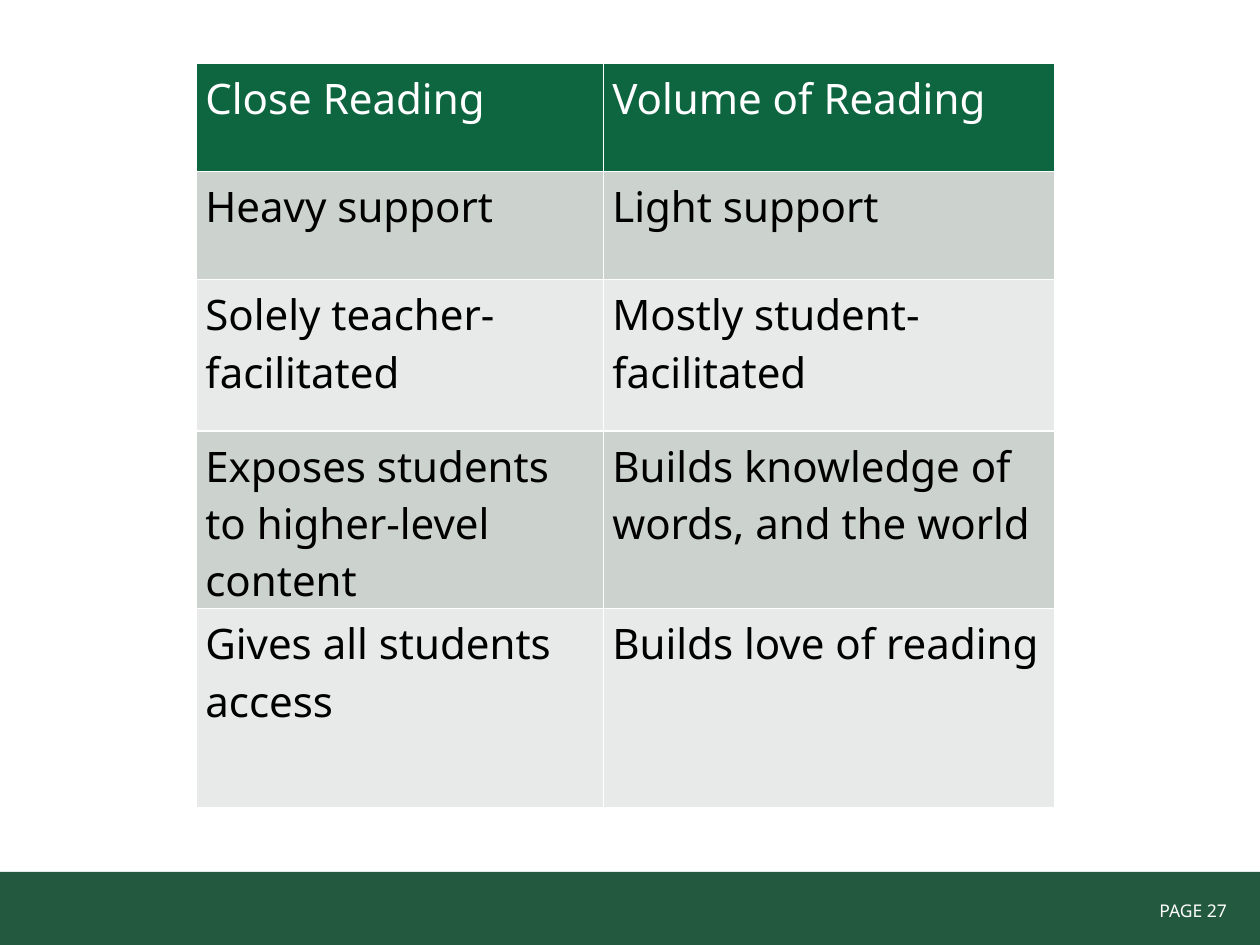
from dataclasses import dataclass

from lxml.etree import SubElement
from pptx import Presentation
from pptx.dml.color import RGBColor
from pptx.enum.shapes import MSO_SHAPE
from pptx.enum.text import MSO_AUTO_SIZE, PP_ALIGN
from pptx.oxml.ns import qn
from pptx.slide import Slide
from pptx.table import _Cell
from pptx.text.text import _Paragraph
from pptx.util import Inches, Pt


@dataclass(frozen=True)
class Theme:
    font: str = "Noto Sans"
    cell_size: int = 24
    footer_size: int = 10
    header: str = "0E6641"
    bands: tuple[str, str] = ("CCD3CF", "E7EAE9")
    footer: str = "23593E"
    light: str = "FFFFFF"
    dark: str = "000000"
    border: float = 1


@dataclass(frozen=True)
class Row:
    height: float
    close_reading: str
    volume_of_reading: str


THEME = Theme()
WIDTH, HEIGHT = 10, 7.5
FOOTER_TOP = 6.92
COLUMNS = (3.23, 3.58)
ROWS = (
    Row(0.86, "Close Reading", "Volume of Reading"),
    Row(0.86, "Heavy support", "Light support"),
    Row(1.2, "Solely teacher-facilitated", "Mostly student-facilitated"),
    Row(1.41, "Exposes students to higher-level content",
        "Builds knowledge of words, and the world"),
    Row(1.58, "Gives all students access", "Builds love of reading"),
)


def style_text(para: _Paragraph, size: float, color: str) -> None:
    for span in para.runs:
        span.font.name = THEME.font
        span.font.size = Pt(size)
        span.font.bold = False
        span.font.color.rgb = RGBColor.from_string(color)


def add_borders(cell: _Cell) -> None:
    properties = cell._tc.get_or_add_tcPr()
    for side in ("lnL", "lnR", "lnT", "lnB"):
        line = SubElement(properties, qn(f"a:{side}"), w=str(Pt(THEME.border)))
        fill = SubElement(line, qn("a:solidFill"))
        SubElement(fill, qn("a:srgbClr"), val=THEME.light)


def fill_cell(cell: _Cell, text: str, background: str, color: str) -> None:
    cell.text_frame.text = text
    style_text(cell.text_frame.paragraphs[0], THEME.cell_size, color)
    cell.margin_left = cell.margin_right = Inches(0.07)
    cell.margin_top = cell.margin_bottom = Inches(0.05)
    add_borders(cell)
    cell.fill.solid()
    cell.fill.fore_color.rgb = RGBColor.from_string(background)


def add_footer(page: Slide) -> None:
    band = page.shapes.add_shape(
        MSO_SHAPE.RECTANGLE, 0, Inches(FOOTER_TOP),
        Inches(WIDTH), Inches(HEIGHT - FOOTER_TOP))
    band.shadow.inherit = False
    band.fill.solid()
    band.fill.fore_color.rgb = RGBColor.from_string(THEME.footer)
    band.line.fill.background()

    box = page.shapes.add_textbox(
        Inches(8.28), Inches(7.09), Inches(1.59), Inches(0.27))
    frame = box.text_frame
    frame.word_wrap = True
    frame.auto_size = MSO_AUTO_SIZE.SHAPE_TO_FIT_TEXT
    frame.text = "PAGE 27 "
    frame.paragraphs[0].alignment = PP_ALIGN.RIGHT
    style_text(frame.paragraphs[0], THEME.footer_size, THEME.light)


def add_comparison(page: Slide) -> None:
    table = page.shapes.add_table(
        len(ROWS), len(COLUMNS), Inches(1.56), Inches(0.5),
        Inches(sum(COLUMNS)), Inches(sum(row.height for row in ROWS))).table
    for column, width in zip(table.columns, COLUMNS):
        column.width = Inches(width)
    for index, row in enumerate(ROWS):
        table.rows[index].height = Inches(row.height)
        # Header row first, then alternating bands
        background = THEME.bands[(index - 1) % 2] if index else THEME.header
        color = THEME.dark if index else THEME.light
        for column, text in enumerate((row.close_reading, row.volume_of_reading)):
            fill_cell(table.cell(index, column), text, background, color)


def main() -> None:
    deck = Presentation()
    deck.slide_width, deck.slide_height = Inches(WIDTH), Inches(HEIGHT)
    page = deck.slides.add_slide(deck.slide_layouts[6])
    add_footer(page)
    add_comparison(page)
    deck.save("out.pptx")


if __name__ == "__main__":
    main()
